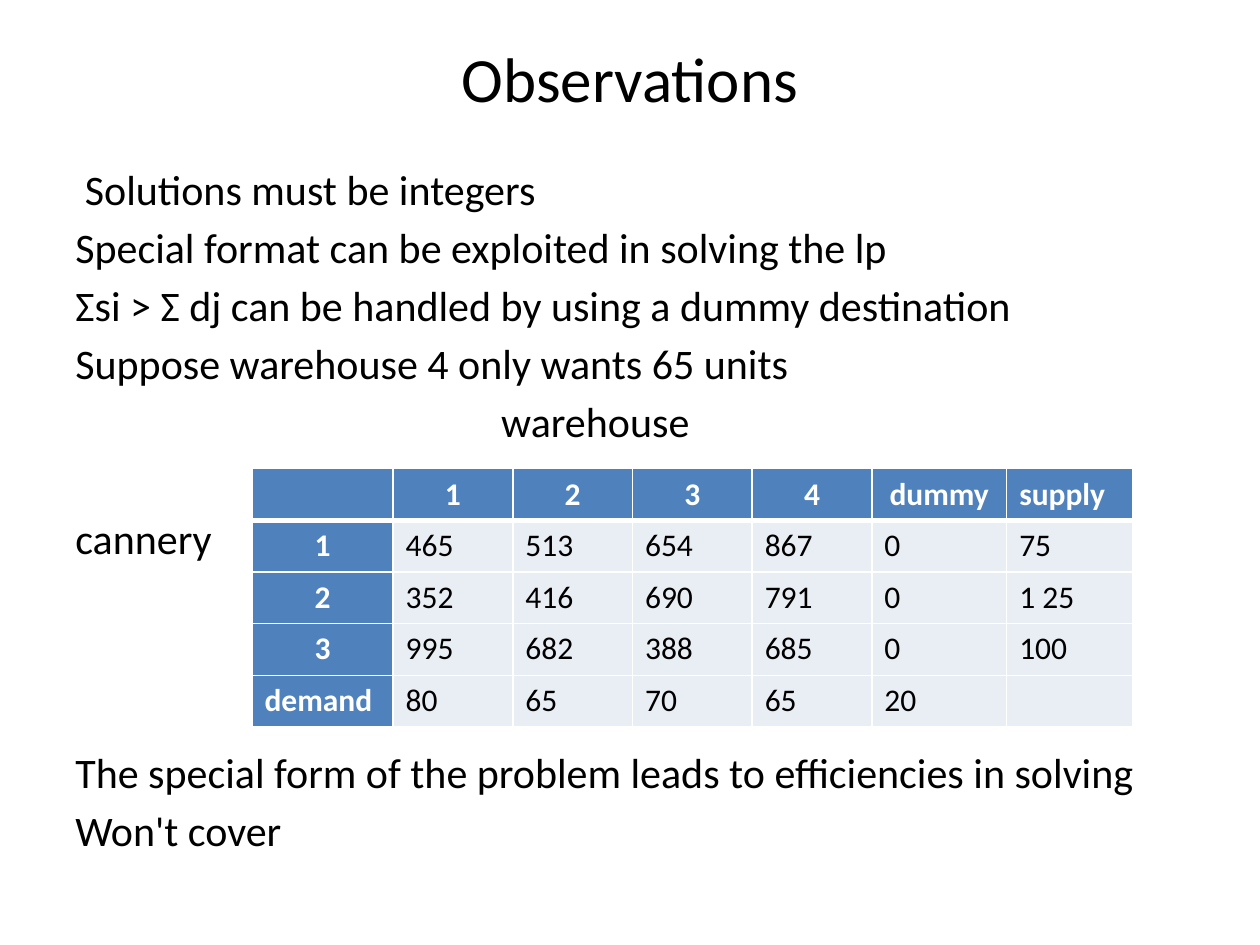
"""Build the Observations slide with its transportation cost table."""
from dataclasses import dataclass

from lxml import etree
from pptx import Presentation
from pptx import util as u
from pptx.dml import color
from pptx.enum import text
from pptx.oxml import ns

FONT = "Calibri"
BLACK, WHITE, BLUE, PALE = "000000", "FFFFFF", "4F81BD", "E9EDF4"
CENTER, LEFT = text.PP_ALIGN.CENTER, text.PP_ALIGN.LEFT
LINE_GAP = 4.3
LINE_PITCH = 33.6


@dataclass(frozen=True)
class Line:
    wording: str
    skipped_lines: int = 0
    indent: float = 0


@dataclass(frozen=True)
class Box:
    left: float
    top: float
    width: float
    height: float

    def lengths(self) -> list:
        return [u.Inches(n) for n in (self.left, self.top, self.width, self.height)]


OBSERVATIONS = [
    Line(" Solutions must be integers"),
    Line("Special format can be exploited in solving the lp"),
    Line("Σsi > Σ dj can be handled by using a dummy destination"),
    Line("Suppose warehouse 4 only wants 65 units"),
    Line("warehouse", indent=3.38),
    Line("cannery", skipped_lines=1),
    Line("The special form of the problem leads to efficiencies in solving", skipped_lines=3),
    Line("Won't cover"),
]
COSTS = [
    ["", "1", "2", "3", "4", "dummy", "supply"],
    ["1", "465", "513", "654", "867", "0", "75"],
    ["2", "352", "416", "690", "791", "0", "1 25"],
    ["3", "995", "682", "388", "685", "0", "100"],
    ["demand", "80", "65", "70", "65", "20", ""],
]
COLUMN_WIDTHS = [1.12, 0.95, 0.95, 0.95, 0.95, 1.07, 1]
ROW_HEIGHT = 0.41


def rgb(hex_code: str) -> color.RGBColor:
    return color.RGBColor.from_string(hex_code)


def write(paragraph, wording: str, size: float, ink: str = BLACK,
          bold: bool = False, align=LEFT) -> None:
    paragraph.alignment = align
    run = paragraph.add_run()
    run.text = wording
    for attribute, value in {"name": FONT, "size": u.Pt(size), "bold": bold}.items():
        setattr(run.font, attribute, value)
    run.font.color.rgb = rgb(ink)


def add_text_frame(slide, box: Box, anchor):
    frame = slide.shapes.add_textbox(*box.lengths()).text_frame
    for attribute, value in {"word_wrap": True, "vertical_anchor": anchor}.items():
        setattr(frame, attribute, value)
    return frame


def add_observations(slide, box: Box, lines: list[Line]) -> None:
    frame = add_text_frame(slide, box, text.MSO_ANCHOR.TOP)
    for index, line in enumerate(lines):
        paragraph = frame.add_paragraph() if index else frame.paragraphs[0]
        write(paragraph, line.wording, 24)
        paragraph.space_before = u.Pt(LINE_GAP + line.skipped_lines * LINE_PITCH)
        if line.indent:
            paragraph._p.get_or_add_pPr().set("marL", str(u.Inches(line.indent)))


def add_borders(cell, widths: dict[str, float]) -> None:
    properties = cell._tc.get_or_add_tcPr()
    for side, width in widths.items():
        border = etree.SubElement(properties, ns.qn(f"a:ln{side}"), w=str(u.Pt(width)))
        fill = etree.SubElement(border, ns.qn("a:solidFill"))
        etree.SubElement(fill, ns.qn("a:srgbClr"), val=WHITE)


def add_costs(slide, box: Box, rows: list[list[str]]) -> None:
    costs = slide.shapes.add_table(len(rows), len(rows[0]), *box.lengths()).table
    for column, width in zip(costs.columns, COLUMN_WIDTHS):
        column.width = u.Inches(width)
    for row_index, row in enumerate(rows):
        costs.rows[row_index].height = u.Inches(ROW_HEIGHT)
        for column_index, wording in enumerate(row):
            cell = costs.cell(row_index, column_index)
            heading = row_index == 0 or column_index == 0
            add_borders(cell, {"L": 1, "R": 1, "T": 3 if row_index == 1 else 1,
                               "B": 3 if row_index == 0 else 1})
            cell.fill.solid()
            cell.fill.fore_color.rgb = rgb(BLUE if heading else PALE)
            if wording:
                centred = heading and wording not in ("supply", "demand")
                write(cell.text_frame.paragraphs[0], wording, 18,
                      WHITE if heading else BLACK, heading, CENTER if centred else LEFT)


def main() -> None:
    deck = Presentation()
    deck.slide_width, deck.slide_height = u.Inches(10), u.Inches(7.5)
    slide = deck.slides.add_slide(deck.slide_layouts[6])
    title = add_text_frame(slide, Box(0.5, 0.3, 9, 0.62), text.MSO_ANCHOR.MIDDLE)
    write(title.paragraphs[0], "Observations", 36, align=CENTER)
    add_observations(slide, Box(0.5, 1.25, 9, 5.45), OBSERVATIONS)
    add_costs(slide, Box(2, 3.72, sum(COLUMN_WIDTHS), ROW_HEIGHT * len(COSTS)), COSTS)
    deck.save("out.pptx")


if __name__ == "__main__":
    main()
